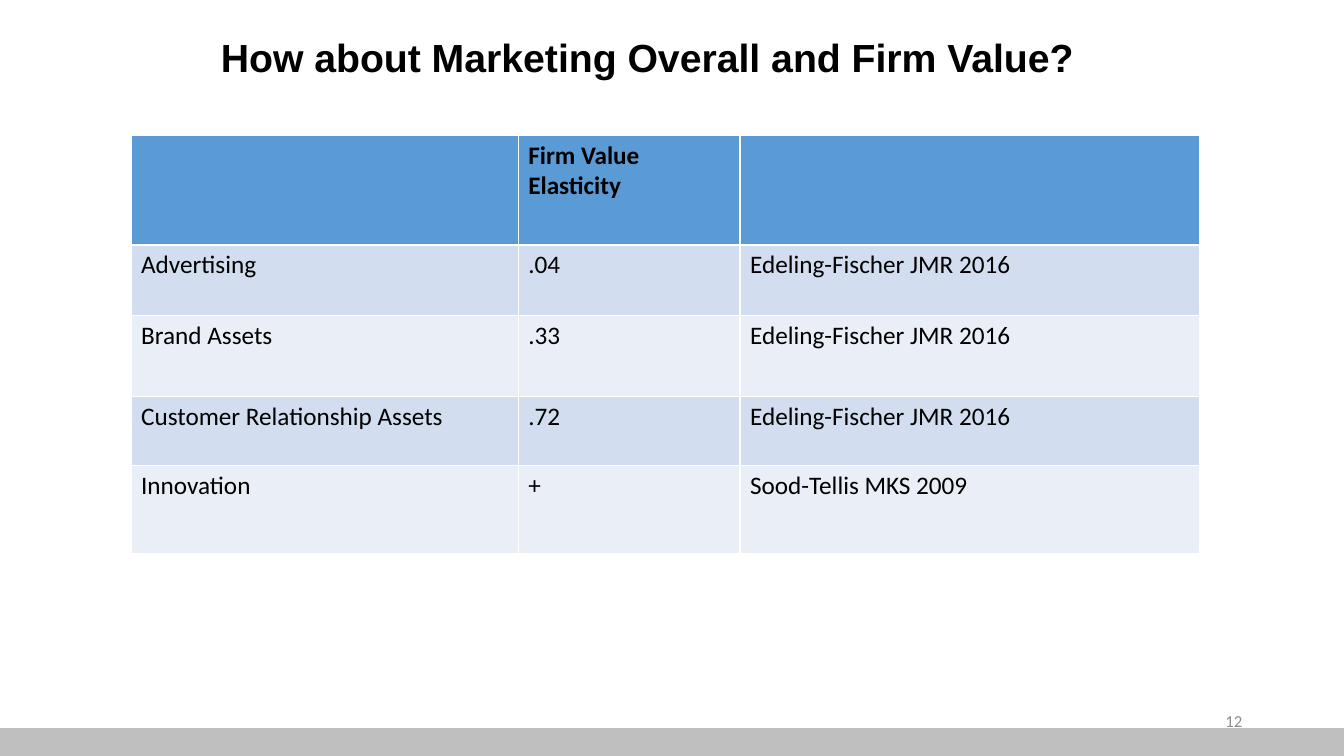
from pptx import Presentation
from pptx import util as u
from pptx.dml import color
from pptx.enum import shapes, text

BLACK = color.RGBColor(0x00, 0x00, 0x00)
GRAY = color.RGBColor(0x8C, 0x8C, 0x8C)
SILVER = color.RGBColor(0xBF, 0xBF, 0xBF)
BLUE = color.RGBColor(0x5B, 0x9B, 0xD5)
BANDS = (color.RGBColor(0xEA, 0xEF, 0xF7), color.RGBColor(0xD2, 0xDE, 0xEF))

WIDE, HIGH = 13.33, 7.5
COLS = (3.84, 2.2, 4.56)
ROWS = (1.09, 0.7, 0.8, 0.69, 0.87)
CELLS = (
    ("", "Firm Value Elasticity", ""),
    ("Advertising", ".04", "Edeling-Fischer JMR 2016"),
    ("Brand Assets", ".33", "Edeling-Fischer JMR 2016"),
    ("Customer Relationship Assets", ".72", "Edeling-Fischer JMR 2016"),
    ("Innovation", "+", "Sood-Tellis MKS 2009"),
)


def place(item, box):
    for name, size in zip(("left", "top", "width", "height"), box):
        setattr(item, name, u.Inches(size))


def style(font, tint, **form):
    for name, value in form.items():
        setattr(font, name, value)
    font.color.rgb = tint


def write(frame, words, align, tint, **form):
    frame.word_wrap = True
    frame.auto_size = text.MSO_AUTO_SIZE.NONE
    frame.vertical_anchor = text.MSO_ANCHOR.MIDDLE
    para = frame.paragraphs[0]
    para.alignment = align
    run = para.add_run()
    run.text = words
    style(run.font, tint, **form)
    return para


def add_bar(slide, box):
    bar = slide.shapes.add_shape(shapes.MSO_SHAPE.RECTANGLE, *map(u.Inches, box))
    bar.shadow.inherit = False
    bar.fill.solid()
    bar.fill.fore_color.rgb = SILVER
    bar.line.color.rgb = SILVER
    bar.line.width = u.Pt(1)


def add_title(slide, box):
    title = slide.shapes.title
    place(title, box)
    para = write(title.text_frame, "How about Marketing Overall and Firm Value?",
                 text.PP_ALIGN.CENTER, BLACK, name="Arial", size=u.Pt(28), bold=True)
    para.line_spacing = 0.9


def add_grid(slide, box):
    grid = slide.shapes.add_table(len(ROWS), len(COLS), *map(u.Inches, box)).table
    for col, share in zip(grid.columns, COLS):
        col.width = u.Inches(box[2] * share / sum(COLS))
    for row, share in zip(grid.rows, ROWS):
        row.height = u.Inches(box[3] * share / sum(ROWS))
    for r, line in enumerate(CELLS):
        for c, words in enumerate(line):
            cell = grid.cell(r, c)
            cell.fill.solid()
            cell.fill.fore_color.rgb = BANDS[r % 2] if r else BLUE
            cell.text = words
            style(cell.text_frame.paragraphs[0].font, BLACK,
                  name="Calibri", size=u.Pt(18), bold=r == 0)
            for run in cell.text_frame.paragraphs[0].runs:
                style(run.font, BLACK, name="Calibri", size=u.Pt(18), bold=r == 0)


def add_page(slide, box):
    page = slide.shapes.add_textbox(*map(u.Inches, box))
    write(page.text_frame, "12", text.PP_ALIGN.RIGHT, GRAY,
          name="Calibri", size=u.Pt(12))


def main():
    deck = Presentation()
    deck.slide_width, deck.slide_height = u.Inches(WIDE), u.Inches(HIGH)
    slide = deck.slides.add_slide(deck.slide_layouts[5])
    add_bar(slide, (0, HIGH - 0.27, WIDE, 0.27))
    add_title(slide, (0, 0.15, 12.84, 0.88))
    add_grid(slide, (1.3, 1.34, sum(COLS), sum(ROWS)))
    add_page(slide, (9.42, 6.95, 3, 0.4))
    deck.save("out.pptx")


if __name__ == "__main__":
    main()
